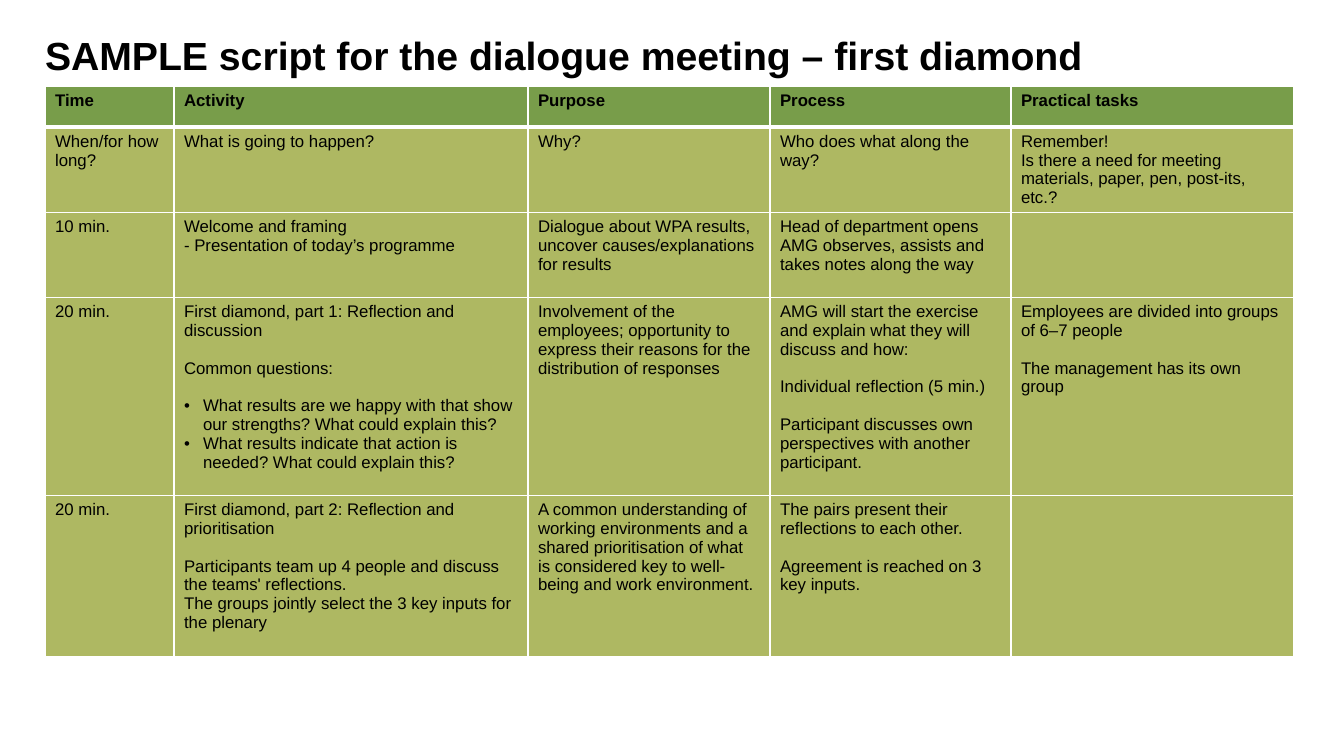
from dataclasses import dataclass

from lxml import etree
from pptx import Presentation
from pptx.dml.color import RGBColor
from pptx.enum.text import MSO_ANCHOR, MSO_AUTO_SIZE, PP_ALIGN
from pptx.oxml.ns import qn
from pptx.slide import Slide
from pptx.table import _Cell
from pptx.text.text import _Paragraph
from pptx.util import Emu, Pt

TOP = MSO_ANCHOR.TOP
NO_AUTOFIT = MSO_AUTO_SIZE.NONE
LEFT = PP_ALIGN.LEFT

SLIDE_WIDTH, SLIDE_HEIGHT = 1344, 756
EMU_PER_PX = 12192000 / SLIDE_WIDTH
FONT = "Arial"
BLACK, WHITE = "000000", "FFFFFF"
HEADER_GREEN, BODY_GREEN = "789D4A", "AEB862"
TITLE_ONLY_LAYOUT = 5
TEXT_SIZE = 12
BLANK_LINE = 13.4  # points
BULLET_INDENT = 19
THIN, THICK = 1, 3  # border widths in points

TABLE_LEFT, TABLE_TOP = 45, 86
COLUMN_WIDTHS = [129, 354, 242, 241, 283]
ROW_HEIGHTS = [41, 85, 85, 198, 161]


@dataclass(frozen=True)
class Line:
    text: str
    gap: bool = False
    bullet: bool = False


HEADINGS = ["Time", "Activity", "Purpose", "Process", "Practical tasks"]
SCRIPT_ROWS = [
    [
        [Line("When/for how long?")],
        [Line("What is going to happen?")],
        [Line("Why?")],
        [Line("Who does what along the way?")],
        [Line("Remember!"),
         Line("Is there a need for meeting materials, paper, pen, post-its, etc.?")],
    ],
    [
        [Line("10 min.")],
        [Line("Welcome and framing"), Line("- Presentation of today’s programme")],
        [Line("Dialogue about WPA results, uncover causes/explanations for results")],
        [Line("Head of department opens"),
         Line("AMG observes, assists and takes notes along the way")],
        [],
    ],
    [
        [Line("20 min.")],
        [Line("First diamond, part 1: Reflection and discussion"),
         Line("Common questions:", gap=True),
         Line("What results are we happy with that show our strengths? "
              "What could explain this?", gap=True, bullet=True),
         Line("What results indicate that action is needed? "
              "What could explain this?", bullet=True)],
        [Line("Involvement of the employees; opportunity to express their reasons "
              "for the distribution of responses")],
        [Line("AMG will start the exercise and explain what they will discuss and how:"),
         Line("Individual reflection (5 min.)", gap=True),
         Line("Participant discusses own perspectives with another participant.", gap=True)],
        [Line("Employees are divided into groups of 6–7 people"),
         Line("The management has its own group", gap=True)],
    ],
    [
        [Line("20 min.")],
        [Line("First diamond, part 2: Reflection and prioritisation"),
         Line("Participants team up 4 people and discuss the teams' reflections.", gap=True),
         Line("The groups jointly select the 3 key inputs for the plenary")],
        [Line("A common understanding of working environments and a shared prioritisation "
              "of what is considered key to well-being and work environment.")],
        [Line("The pairs present their reflections to each other."),
         Line("Agreement is reached on 3 key inputs.", gap=True)],
        [],
    ],
]


def px(length: int) -> Emu:
    return Emu(round(length * EMU_PER_PX))


def color(value: str) -> RGBColor:
    return RGBColor.from_string(value)


def set_font(paragraph: _Paragraph, size: int, bold: bool) -> None:
    font = paragraph.font
    font.name, font.size, font.bold = FONT, Pt(size), bold
    font.color.rgb = color(BLACK)


def add_bullet(paragraph: _Paragraph) -> None:
    properties = paragraph._p.get_or_add_pPr()
    properties.set("marL", str(px(BULLET_INDENT)))
    properties.set("indent", str(-px(BULLET_INDENT)))
    etree.SubElement(properties, qn("a:buFont")).set("typeface", FONT)
    etree.SubElement(properties, qn("a:buChar")).set("char", "•")


def set_borders(cell: _Cell, top: int, bottom: int) -> None:
    properties = cell._tc.get_or_add_tcPr()
    widths = {"a:lnL": THIN, "a:lnR": THIN, "a:lnT": top, "a:lnB": bottom}
    for position, (tag, width) in enumerate(widths.items()):
        border = etree.Element(qn(tag), w=str(Pt(width)))
        fill = etree.SubElement(border, qn("a:solidFill"))
        etree.SubElement(fill, qn("a:srgbClr")).set("val", WHITE)
        properties.insert(position, border)


def write_lines(cell: _Cell, lines: list[Line], bold: bool) -> None:
    frame = cell.text_frame
    for index, line in enumerate(lines):
        paragraph = frame.add_paragraph() if index else frame.paragraphs[0]
        paragraph.text = line.text
        if line.bullet:
            add_bullet(paragraph)
        if line.gap:
            paragraph.space_before = Pt(BLANK_LINE)
        set_font(paragraph, TEXT_SIZE, bold)


def add_title(slide: Slide, text: str) -> None:
    title = slide.shapes.title
    title.left, title.top, title.width, title.height = px(45), px(34), px(1209), px(74)
    frame = title.text_frame
    frame.margin_left = frame.margin_top = frame.margin_right = frame.margin_bottom = 0
    frame.word_wrap = True
    frame.auto_size = NO_AUTOFIT
    frame.vertical_anchor = TOP
    paragraph = frame.paragraphs[0]
    paragraph.text = text
    paragraph.alignment = LEFT
    paragraph.line_spacing = 0.97
    set_font(paragraph, 28, True)


def add_script_table(slide: Slide) -> None:
    rows = [[[Line(heading)] for heading in HEADINGS], *SCRIPT_ROWS]
    table = slide.shapes.add_table(
        len(rows), len(HEADINGS), px(TABLE_LEFT), px(TABLE_TOP),
        px(sum(COLUMN_WIDTHS)), px(sum(ROW_HEIGHTS))).table
    for column, width in zip(table.columns, COLUMN_WIDTHS):
        column.width = px(width)
    for row_index, (row, height) in enumerate(zip(rows, ROW_HEIGHTS)):
        table.rows[row_index].height = px(height)
        is_header = row_index == 0
        for column_index, lines in enumerate(row):
            cell = table.cell(row_index, column_index)
            cell.fill.solid()
            cell.fill.fore_color.rgb = color(HEADER_GREEN if is_header else BODY_GREEN)
            # The heavy rule lies between the header and the first body row
            set_borders(cell, THICK if row_index == 1 else THIN, THICK if is_header else THIN)
            write_lines(cell, lines, is_header)


def main() -> None:
    presentation = Presentation()
    presentation.slide_width, presentation.slide_height = px(SLIDE_WIDTH), px(SLIDE_HEIGHT)
    slide = presentation.slides.add_slide(presentation.slide_layouts[TITLE_ONLY_LAYOUT])
    add_title(slide, "SAMPLE script for the dialogue meeting – first diamond")
    add_script_table(slide)
    presentation.save("out.pptx")


if __name__ == "__main__":
    main()
